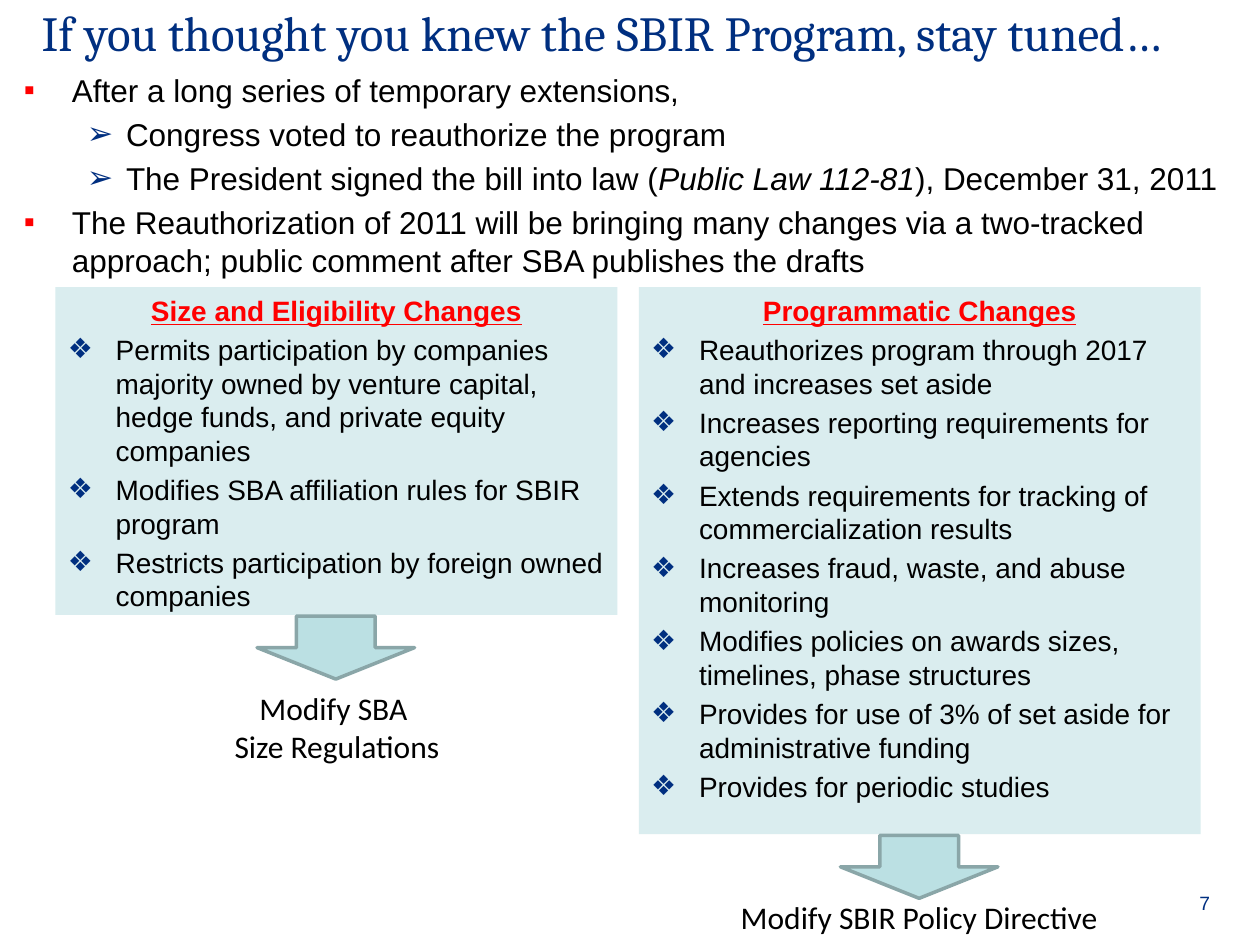
from lxml.etree import SubElement
from pptx import Presentation
from pptx.dml.color import RGBColor
from pptx.enum.shapes import MSO_SHAPE as Shape
from pptx.enum.text import MSO_ANCHOR as Anchor, MSO_AUTO_SIZE as AutoSize, PP_ALIGN as Align
from pptx.oxml.ns import qn
from pptx.util import Emu, Pt

PX = 9144  # EMU per px, at 100 px to the inch
NAVY, RED, BLACK = "002F80", "FF0000", "000000"
PANEL_FILL, ARROW_FILL, ARROW_LINE = "DAEDEF", "BBE0E3", "8AA6A8"

TITLE = "If you thought you knew the SBIR Program, stay tuned…"
# (level, runs), each run being (text, italic)
INTRO = [
    (0, [("After a long series of temporary extensions,", False)]),
    (1, [("Congress voted to reauthorize the program", False)]),
    (1, [("The President signed the bill into law (", False),
         ("Public Law 112-81", True),
         ("), December 31, 2011", False)]),
    (0, [("The Reauthorization of 2011 will be bringing many changes via a two-tracked "
          "approach; public comment after SBA publishes the drafts", False)]),
]
# Per level: bullet, bullet colour, left margin, hanging indent
INTRO_LEVELS = [("▪", RED, 38, 38), ("➢", NAVY, 81, 31)]
PANEL_BULLET = ("❖", NAVY, 38, 38)

TRACKS = [
    {
        "heading": "Size and Eligibility Changes",
        "changes": [
            "Permits participation by companies majority owned by venture capital, "
            "hedge funds, and private equity companies",
            "Modifies SBA affiliation rules for SBIR program",
            "Restricts participation by foreign owned companies",
        ],
        "left": 44, "height": 260,
        "outcome": ["Modify SBA ", "Size Regulations"],
        "outcome_box": (171, 542, 193, 71),
    },
    {
        "heading": "Programmatic Changes",
        "changes": [
            "Reauthorizes program through 2017 and increases set aside",
            "Increases reporting requirements for agencies",
            "Extends requirements for tracking of commercialization results",
            "Increases fraud, waste, and abuse monitoring",
            "Modifies policies on awards sizes, timelines, phase structures",
            "Provides for use of 3% of set aside for administrative funding",
            "Provides for periodic studies",
        ],
        "left": 507, "height": 434,
        "outcome": ["Modify SBIR Policy Directive"],
        "outcome_box": (565, 708, 329, 40),
    },
]
PANEL_TOP, PANEL_WIDTH = 228, 446
ARROW_WIDTH, ARROW_HEIGHT, ARROW_GAP = 125, 50, 1


def px(*lengths):
    return [Emu(length * PX) for length in lengths]


def color(value):
    return RGBColor.from_string(value)


def place(shape, *box):
    shape.left, shape.top, shape.width, shape.height = px(*box)


def next_paragraph(frame, index):
    return frame.add_paragraph() if index else frame.paragraphs[0]


def add_run(paragraph, text, size, font="Arial", fill=BLACK, **styles):
    run = paragraph.add_run()
    run.text = text
    run.font.size, run.font.name = Pt(size), font
    run.font.color.rgb = color(fill)
    for name, value in styles.items():
        setattr(run.font, name, value)


def space_list_item(paragraph, index, size):
    """Space before is a fifth of the text size, except at the top of a box."""
    paragraph.line_spacing = 1.0
    paragraph.space_before = Pt(size * 0.2 if index else 0)


def set_bullet(paragraph, character, fill, margin, hanging):
    properties = paragraph._p.get_or_add_pPr()
    properties.set("marL", str(margin * PX))
    properties.set("indent", str(-hanging * PX))
    bullet_color = SubElement(properties, qn("a:buClr"))
    SubElement(bullet_color, qn("a:srgbClr"), val=fill)
    SubElement(properties, qn("a:buFont"), typeface="Arial")
    SubElement(properties, qn("a:buChar"), char=character)


def add_shape(slide, kind, box, fill):
    shape = slide.shapes.add_shape(kind, *px(*box))
    shape.shadow.inherit = False
    shape.fill.solid()
    shape.fill.fore_color.rgb = color(fill)
    shape.line.fill.background()
    return shape


def add_label(slide, box, lines, size, font, fill, align):
    frame = slide.shapes.add_textbox(*px(*box)).text_frame
    frame.word_wrap = True
    for index, line in enumerate(lines):
        paragraph = next_paragraph(frame, index)
        paragraph.alignment = align
        add_run(paragraph, line, size, font, fill)
    return frame


def fill_placeholders(slide):
    title, body = slide.shapes.title, slide.placeholders[1]
    place(title, 23, -15, 955, 80)
    title.text_frame.vertical_anchor = Anchor.MIDDLE
    title.text_frame.paragraphs[0].alignment = Align.LEFT
    add_run(title.text_frame.paragraphs[0], TITLE, 28, "Cambria", NAVY)

    place(body, 9, 51, 986, 150)
    for index, (level, runs) in enumerate(INTRO):
        paragraph = next_paragraph(body.text_frame, index)
        paragraph.level = level
        space_list_item(paragraph, index, 18)
        set_bullet(paragraph, *INTRO_LEVELS[level])
        for text, italic in runs:
            add_run(paragraph, text, 18, italic=italic)
    for shape in (title, body):
        shape.text_frame.auto_size = AutoSize.NONE


def add_track(slide, track):
    """Draw a panel of changes, the arrow below it and the outcome it leads to."""
    left, height = track["left"], track["height"]
    panel = add_shape(slide, Shape.RECTANGLE, (left, PANEL_TOP, PANEL_WIDTH, height), PANEL_FILL)
    frame = panel.text_frame
    frame.vertical_anchor = Anchor.TOP
    for index, text in enumerate([track["heading"], *track["changes"]]):
        paragraph = next_paragraph(frame, index)
        space_list_item(paragraph, index, 16)
        if index:
            paragraph.alignment = Align.LEFT
            set_bullet(paragraph, *PANEL_BULLET)
            add_run(paragraph, text, 16)
        else:
            paragraph.alignment = Align.CENTER
            add_run(paragraph, text, 16, fill=RED, bold=True, underline=True)

    arrow_left = left + (PANEL_WIDTH - ARROW_WIDTH) // 2
    arrow_top = PANEL_TOP + height + ARROW_GAP
    arrow = add_shape(slide, Shape.DOWN_ARROW,
                      (arrow_left, arrow_top, ARROW_WIDTH, ARROW_HEIGHT), ARROW_FILL)
    arrow.line.color.rgb = color(ARROW_LINE)
    arrow.line.width = Pt(2)
    add_label(slide, track["outcome_box"], track["outcome"], 18, "Calibri", BLACK, Align.CENTER)


def main():
    presentation = Presentation()
    presentation.slide_width, presentation.slide_height = px(1000, 750)
    slide = presentation.slides.add_slide(presentation.slide_layouts[1])
    fill_placeholders(slide)
    for track in TRACKS:
        add_track(slide, track)
    number = add_label(slide, (942, 703, 50, 28), ["7"], 11, "Arial", NAVY, Align.LEFT)
    number.vertical_anchor = Anchor.BOTTOM
    presentation.save("out.pptx")


if __name__ == "__main__":
    main()
